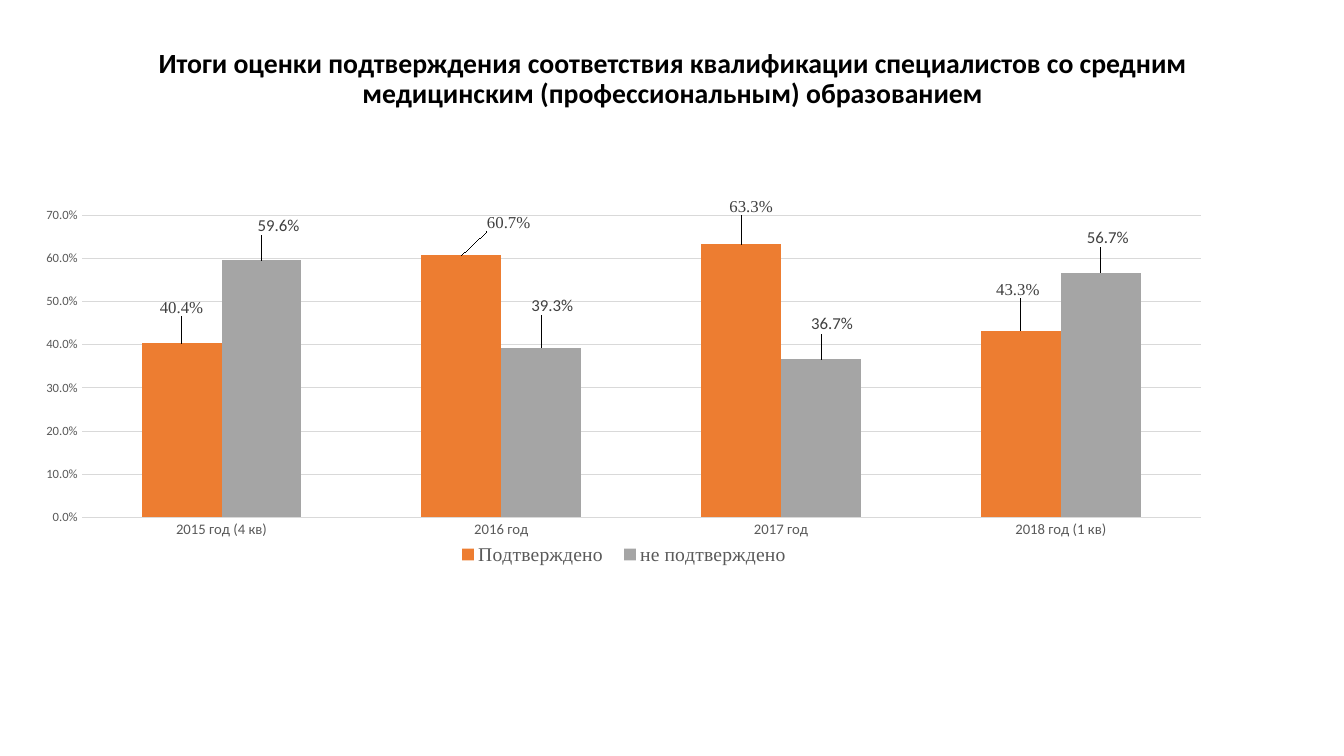
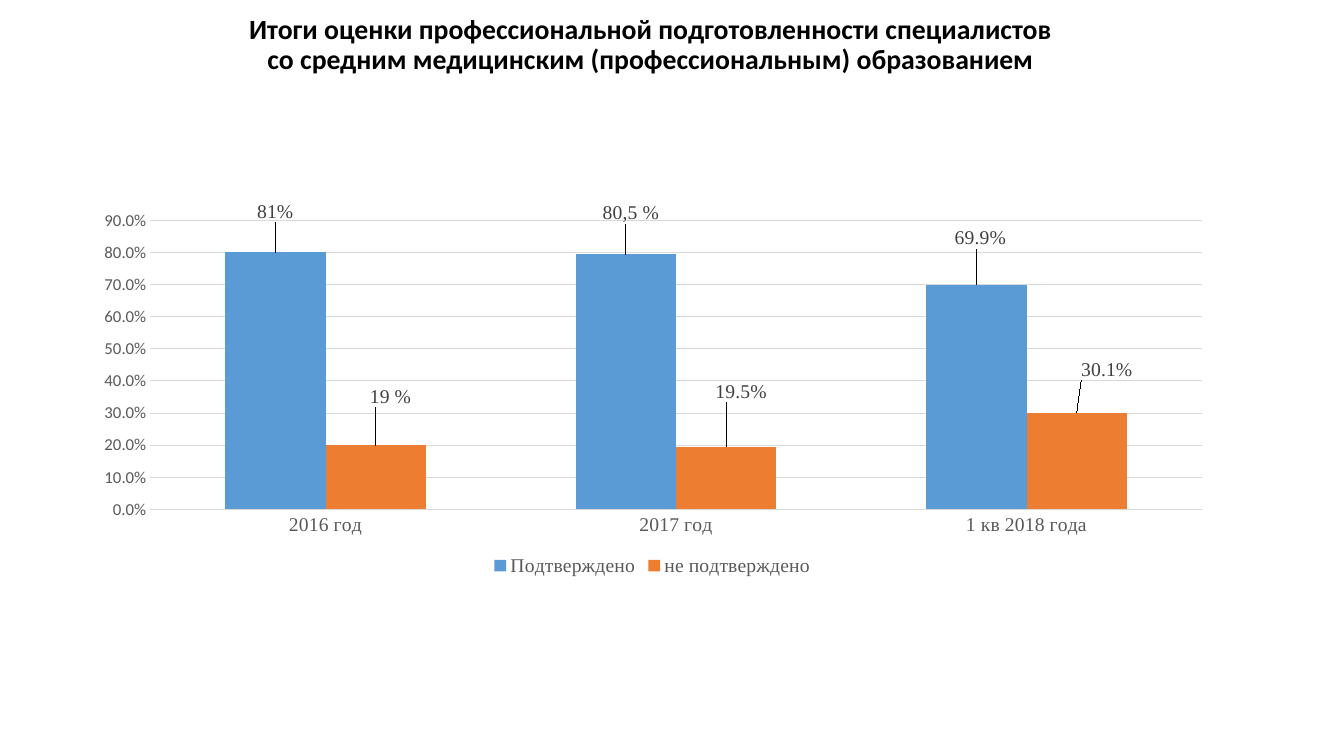
import dataclasses

import pptx
import pptx.chart.data
import pptx.dml.color
import pptx.enum.chart
import pptx.enum.text
import pptx.oxml
import pptx.oxml.ns
import pptx.util

Inches = pptx.util.Inches
Pt = pptx.util.Pt


@dataclasses.dataclass(frozen=True)
class Theme:
    sans: str = "Calibri"
    serif: str = "Times New Roman"
    title: str = "000000"
    muted: str = "595959"
    label: str = "404040"
    grid: str = "D9D9D9"
    blue: str = "5B9BD5"
    orange: str = "ED7D31"
    grey: str = "A5A5A5"
    title_size: float = 19.8
    base_size: float = 10
    legend_size: float = 14


THEME = Theme()

CONFIRMATION = {
    "title": "Итоги оценки подтверждения соответствия квалификации специалистов "
             "со средним медицинским (профессиональным) образованием",
    "title_box": (0.92, 0.42, 11.5, 0.73),
    "chart_box": (0.23, 1.96, 11.93, 3.84),
    "plot_box": (0.81, 2.11, 11.1, 3.02),
    "legend_box": (4.44, 5.35, 3.5, 0.3),
    "category_font": (10.5, THEME.sans),
    "value_size": 9,
    "maximum": 0.7,
    "years": ["2015 год (4 кв)", "2016 год", "2017 год", "2018 год (1 кв)"],
    "series": [
        {"name": "Подтверждено", "values": [0.404, 0.607, 0.633, 0.433],
         "colour": THEME.orange, "label_font": (12, THEME.serif), "texts": {},
         "shifts": [(0, -0.23), (0.47, -0.2), (0.1, -0.25), (-0.03, -0.28)]},
        {"name": "не подтверждено", "values": [0.596, 0.393, 0.367, 0.567],
         "colour": THEME.grey, "label_font": (12, THEME.sans), "texts": {},
         "shifts": [(0.17, -0.21), (0.11, -0.28), (0.11, -0.21), (0.07, -0.21)]},
    ],
}

TRAINING = {
    "title": "Итоги оценки профессиональной подготовленности специалистов\v"
             "со средним медицинским (профессиональным) образованием",
    "title_box": (0.8, 0.17, 11.3, 0.56),
    "chart_box": (0.8, 1.99, 11.34, 3.77),
    "plot_box": (1.49, 2.16, 10.43, 2.89),
    "legend_box": None,
    "category_font": (14, THEME.serif),
    "value_size": 12,
    "maximum": 0.9,
    "years": ["2016 год", "2017 год", "1 кв 2018 года"],
    "series": [
        {"name": "Подтверждено", "values": [0.8, 0.795, 0.699],
         "colour": THEME.blue, "label_font": (14, THEME.serif),
         "texts": {0: "81%", 1: "80,5 %"},
         "shifts": [(0, -0.26), (0.05, -0.26), (0.04, -0.32)]},
        {"name": "не подтверждено", "values": [0.2, 0.195, 0.301],
         "colour": THEME.orange, "label_font": (14, THEME.serif),
         "texts": {0: "19 %"},
         "shifts": [(0.15, -0.34), (0.15, -0.4), (0.3, -0.28)]},
    ],
}


def set_values(target, values):
    for name, value in values.items():
        setattr(target, name, value)


def rgb(colour):
    return pptx.dml.color.RGBColor.from_string(colour)


def set_font(font, size, face, colour, bold=False):
    set_values(font, {"size": Pt(size), "name": face, "bold": bold})
    font.color.rgb = rgb(colour)


def set_layout(parent, position, values):
    for old in parent.xpath("c:layout"):
        parent.remove(old)
    entries = "".join(f'<c:{key} val="{value}"/>' for key, value in values.items())
    parent.insert(position, pptx.oxml.parse_xml(
        f'<c:layout {pptx.oxml.ns.nsdecls("c")}>'
        f"<c:manualLayout>{entries}</c:manualLayout></c:layout>"))


def box_layout(box, chart_box):
    left, top, width, height = chart_box
    return {
        "xMode": "edge", "yMode": "edge",
        "x": (box[0] - left) / width, "y": (box[1] - top) / height,
        "w": box[2] / width, "h": box[3] / height,
    }


def add_title(slide, text, box):
    title = slide.shapes.title
    set_values(title, dict(zip(("left", "top", "width", "height"), map(Inches, box))))
    frame = title.text_frame
    frame.text = text
    set_values(frame, {
        "word_wrap": True,
        "auto_size": pptx.enum.text.MSO_AUTO_SIZE.NONE,
        "vertical_anchor": pptx.enum.text.MSO_ANCHOR.MIDDLE,
    })
    heading = frame.paragraphs[0]
    set_values(heading, {"alignment": pptx.enum.text.PP_ALIGN.CENTER, "line_spacing": 0.9})
    for run in heading.runs:
        set_font(run.font, THEME.title_size, THEME.sans, THEME.title, True)


def format_axis(axis, size, face):
    none = pptx.enum.chart.XL_TICK_MARK.NONE
    set_values(axis, {"major_tick_mark": none, "minor_tick_mark": none})
    axis.format.line.fill.background()
    set_font(axis.tick_labels.font, size, face, THEME.muted)


def format_value_axis(axis, size, maximum):
    format_axis(axis, size, THEME.sans)
    set_values(axis, {"minimum_scale": 0, "maximum_scale": maximum,
                      "major_unit": 0.1, "has_major_gridlines": True})
    set_values(axis.tick_labels, {"number_format": "0.0%", "number_format_is_linked": False})
    gridline = axis.major_gridlines.format.line
    gridline.width = Pt(0.75)
    gridline.color.rgb = rgb(THEME.grid)


def format_series(bars, element, content, chart_box):
    bars.format.fill.solid()
    bars.format.fill.fore_color.rgb = rgb(content["colour"])
    outside = pptx.enum.chart.XL_LABEL_POSITION.OUTSIDE_END
    set_values(bars.data_labels, {"show_value": True, "number_format": "0.0%",
                                  "number_format_is_linked": False, "position": outside})
    label_font = (*content["label_font"], THEME.label)
    set_font(bars.data_labels.font, *label_font)
    for index in range(len(content["values"])):
        label = bars.points[index].data_label
        if index in content["texts"]:
            label.text_frame.text = content["texts"][index]
            set_font(label.text_frame.paragraphs[0].runs[0].font, *label_font)
        else:
            set_font(label.font, *label_font)
        label.position = outside
    for label, (across, down) in zip(element.xpath("c:dLbls/c:dLbl"), content["shifts"]):
        set_layout(label, 1, {"x": across / chart_box[2], "y": down / chart_box[3]})


def add_legend(chart, box, chart_box):
    chart.has_legend = True
    legend = chart.legend
    set_values(legend, {"position": pptx.enum.chart.XL_LEGEND_POSITION.BOTTOM,
                        "include_in_layout": False})
    set_font(legend.font, THEME.legend_size, THEME.serif, THEME.muted)
    if box:
        set_layout(chart.element.xpath(".//c:legend")[0], 1, box_layout(box, chart_box))


def add_results_chart(slide, content):
    results = pptx.chart.data.CategoryChartData(number_format="0.0%")
    results.categories = content["years"]
    for series in content["series"]:
        results.add_series(series["name"], series["values"])
    chart_box = content["chart_box"]
    chart = slide.shapes.add_chart(
        pptx.enum.chart.XL_CHART_TYPE.COLUMN_CLUSTERED, *map(Inches, chart_box), results).chart
    chart.has_title = False
    set_font(chart.font, THEME.base_size, THEME.sans, THEME.title)
    plot = chart.plots[0]
    set_values(plot, {"gap_width": 150, "overlap": 0, "vary_by_categories": False})
    format_axis(chart.category_axis, *content["category_font"])
    format_value_axis(chart.value_axis, content["value_size"], content["maximum"])
    for bars, element, series in zip(plot.series, chart.element.xpath(".//c:ser"),
                                     content["series"]):
        format_series(bars, element, series, chart_box)
    add_legend(chart, content["legend_box"], chart_box)
    set_layout(chart.element.xpath(".//c:plotArea")[0], 0,
               {"layoutTarget": "inner", **box_layout(content["plot_box"], chart_box)})


def main():
    presentation = pptx.Presentation()
    set_values(presentation, {"slide_width": Inches(13.33), "slide_height": Inches(7.5)})
    for content in (CONFIRMATION, TRAINING):
        slide = presentation.slides.add_slide(presentation.slide_layouts[5])
        add_title(slide, content["title"], content["title_box"])
        add_results_chart(slide, content)
    presentation.save("out.pptx")


if __name__ == "__main__":
    main()
